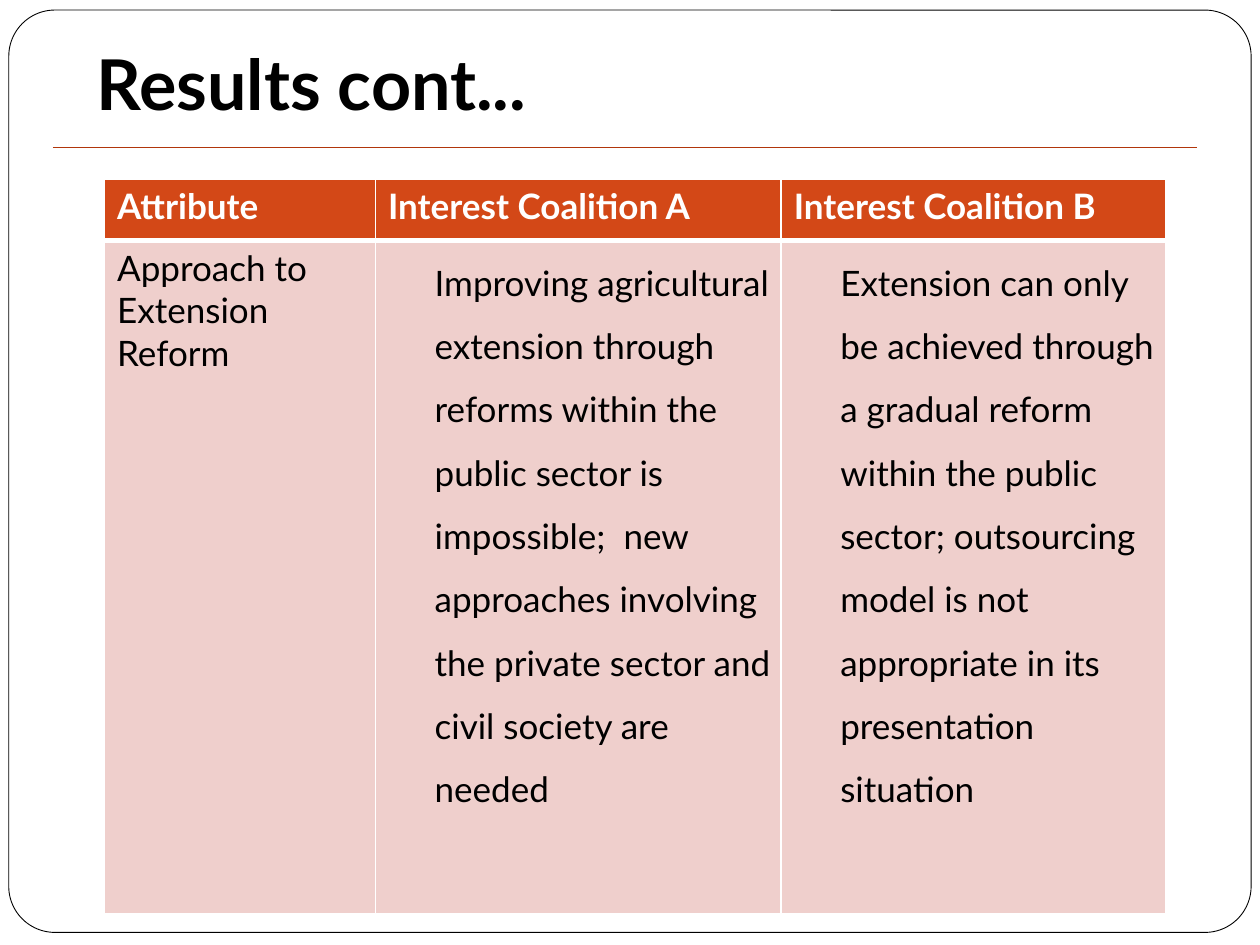
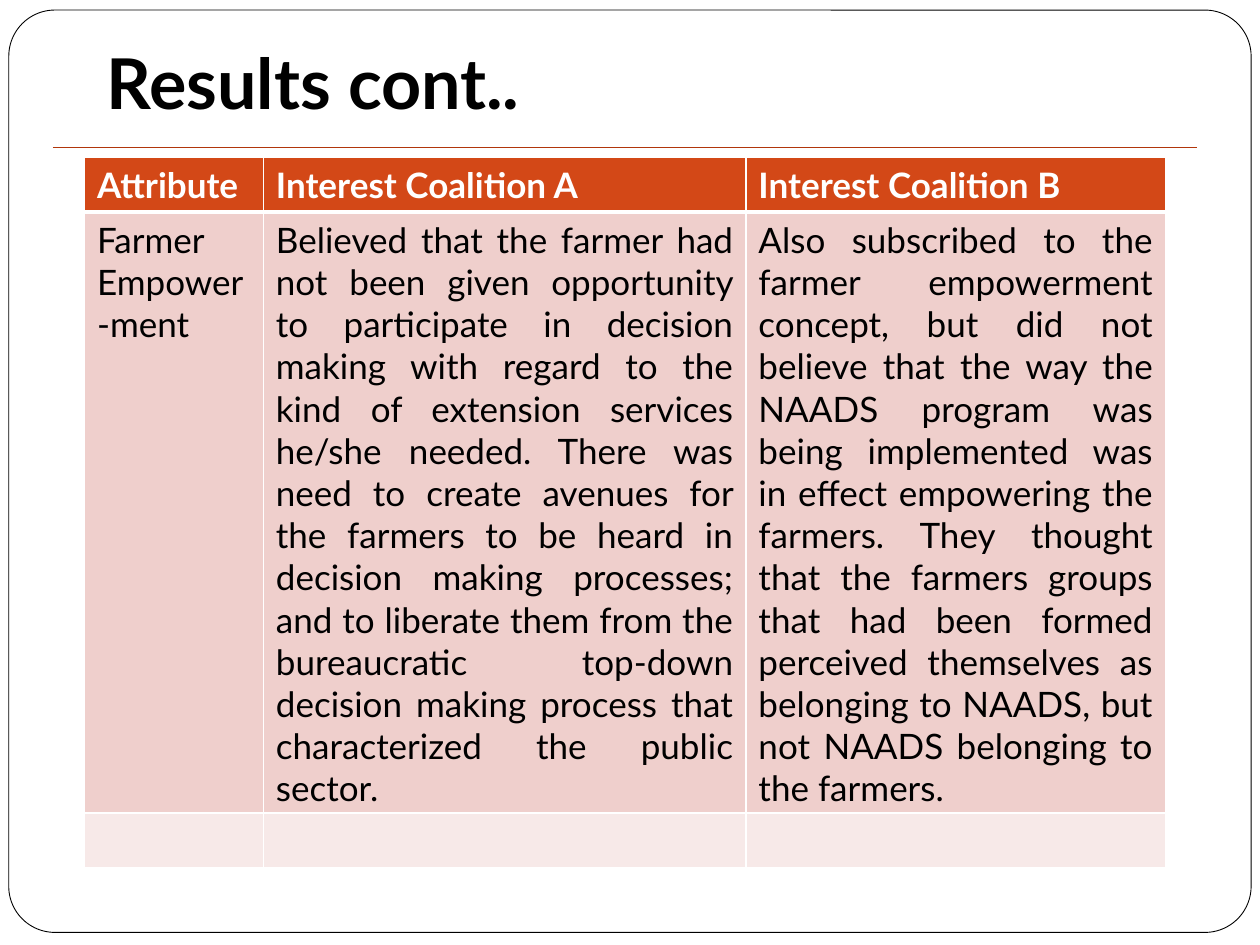
from lxml.etree import SubElement
from pptx import Presentation
from pptx.dml.color import RGBColor
from pptx.enum.shapes import MSO_CONNECTOR as Connector, MSO_SHAPE as Preset
from pptx.enum.text import MSO_ANCHOR as Anchor, PP_ALIGN as Align
from pptx.oxml import parse_xml
from pptx.oxml.ns import nsdecls, qn
from pptx.util import Inches, Pt

WHITE = RGBColor(0xFF, 0xFF, 0xFF)
BLACK = RGBColor(0x00, 0x00, 0x00)
RULE = RGBColor(0xB1, 0x36, 0x0B)
HEADER = RGBColor(0xD3, 0x48, 0x17)
BAND_DARK = RGBColor(0xEF, 0xCF, 0xCC)
BAND_LIGHT = RGBColor(0xF7, 0xE9, 0xE8)
FONT = "Lato"

HEADINGS = ["Attribute", "Interest Coalition A", "Interest Coalition B"]
INDENTED = {"indent": 0.4, "margins": (0.07, 0, 0.07, 0), "para": {"line_spacing": 1.5}}
JUSTIFIED = {"para": {"alignment": Align.JUSTIFY}}

REFORM_ROWS = [
    HEADINGS,
    [
        "Approach to Extension Reform",
        "Improving agricultural extension through reforms within the public sector "
        "is impossible;  new approaches involving the private sector and civil "
        "society are needed",
        "Extension can only be achieved through a gradual reform within the public "
        "sector; outsourcing model is not appropriate in its presentation situation",
    ],
]
EMPOWERMENT_ROWS = [
    HEADINGS,
    [
        "Farmer Empower-ment",
        "Believed that the farmer had not been given opportunity to participate in "
        "decision making with regard to the kind of extension services he/she needed. "
        "There was need to create avenues for the farmers to be heard in decision "
        "making processes; and to liberate them from the bureaucratic top-down "
        "decision making process that characterized the public sector. ",
        "Also subscribed to the farmer empowerment concept, but did not believe that "
        "the way the NAADS program was being implemented was in effect empowering the "
        "farmers. They thought that the farmers groups that had been formed perceived "
        "themselves as belonging to NAADS, but not NAADS belonging to the farmers. ",
    ],
    ["", "", ""],
]


def apply_format(target, values):
    for name, value in values.items():
        setattr(target, name, value)


class SlideBuilder:
    def __init__(self, deck):
        self.deck = deck
        self.page = None

    def start_page(self):
        self.page = self.deck.slides.add_slide(self.deck.slide_layouts[6])
        self.frame()
        self.rule()

    def frame(self):
        box = self.page.shapes.add_shape(
            Preset.ROUNDED_RECTANGLE, Inches(0.07), Inches(0.08), Inches(9.86), Inches(7.32)
        )
        box.adjustments[0] = 0.05
        box.shadow.inherit = False
        box.fill.solid()
        box.fill.fore_color.rgb = WHITE
        box.line.color.rgb = BLACK
        box.line.width = Pt(0.5)

    def rule(self):
        line = self.page.shapes.add_connector(
            Connector.STRAIGHT, Inches(0.42), Inches(1.17), Inches(9.5), Inches(1.17)
        )
        line.line.color.rgb = RULE
        line.line.width = Pt(0.75)
        SubElement(line._element.spPr, qn("a:effectLst"))

    def add_span(self, para, text, size, color, bold):
        span = para.add_run()
        span.text = text
        apply_format(span.font, {"name": FONT, "size": Pt(size), "bold": bold})
        span.font.color.rgb = color

    def title(self, text, left, top, height):
        box = self.page.shapes.add_textbox(
            Inches(left), Inches(top), Inches(8.5), Inches(height)
        )
        apply_format(box.text_frame, {
            "word_wrap": True,
            "vertical_anchor": Anchor.BOTTOM,
            "margin_left": Inches(0.1),
            "margin_top": Inches(0.05),
            "margin_right": Inches(0.1),
            "margin_bottom": Inches(0.1),
        })
        self.add_span(box.text_frame.paragraphs[0], text, 40, BLACK, True)

    def borders(self, cell, top, bottom):
        properties = cell._tc.get_or_add_tcPr()
        widths = {"lnL": 1, "lnR": 1, "lnT": top, "lnB": bottom}
        for position, (side, width) in enumerate(widths.items()):
            properties.insert(position, parse_xml(
                f'<a:{side} {nsdecls("a")} w="{Pt(width)}"><a:solidFill>'
                f'<a:srgbClr val="{WHITE}"/></a:solidFill></a:{side}>'
            ))

    def cell(self, cell, text, fill, color, bold, style):
        cell.fill.solid()
        cell.fill.fore_color.rgb = fill
        sides = ("margin_left", "margin_top", "margin_right", "margin_bottom")
        margins = style.get("margins", (0.1, 0.05, 0.1, 0.05))
        apply_format(cell, dict(zip(sides, map(Inches, margins))))
        para = cell.text_frame.paragraphs[0]
        apply_format(para, style.get("para", {}))
        if "indent" in style:
            para._p.get_or_add_pPr().set("marL", str(Inches(style["indent"])))
        if text:
            self.add_span(para, text, 20, color, bold)

    def table(self, left, top, widths, heights, rows, body_style):
        table = self.page.shapes.add_table(
            len(rows), len(widths), Inches(left), Inches(top),
            Inches(sum(widths)), Inches(sum(heights)),
        ).table
        for column, width in zip(table.columns, widths):
            column.width = Inches(width)
        for row, height in zip(table.rows, heights):
            row.height = Inches(height)
        fills = [HEADER, BAND_DARK, BAND_LIGHT]
        for r, texts in enumerate(rows):
            is_header = r == 0
            color = WHITE if is_header else BLACK
            for c, text in enumerate(texts):
                cell = table.cell(r, c)
                style = body_style if r == 1 and c > 0 else {}
                self.cell(cell, text, fills[r], color, is_header, style)
                self.borders(cell, 3 if r == 1 else 1, 3 if is_header else 1)


def main():
    deck = Presentation()
    deck.slide_width, deck.slide_height = Inches(10), Inches(7.5)
    builder = SlideBuilder(deck)

    builder.start_page()
    builder.title("Results cont...", 0.67, 0.17, 0.92)
    builder.table(0.83, 1.42, [2.15, 3.22, 3.05], [0.49, 5.34], REFORM_ROWS, INDENTED)

    builder.start_page()
    builder.title("Results cont..", 0.75, 0.25, 0.83)
    builder.table(
        0.67, 1.25, [1.42, 3.83, 3.33], [0.43, 4.77, 0.43], EMPOWERMENT_ROWS, JUSTIFIED
    )

    deck.save("out.pptx")


if __name__ == "__main__":
    main()
